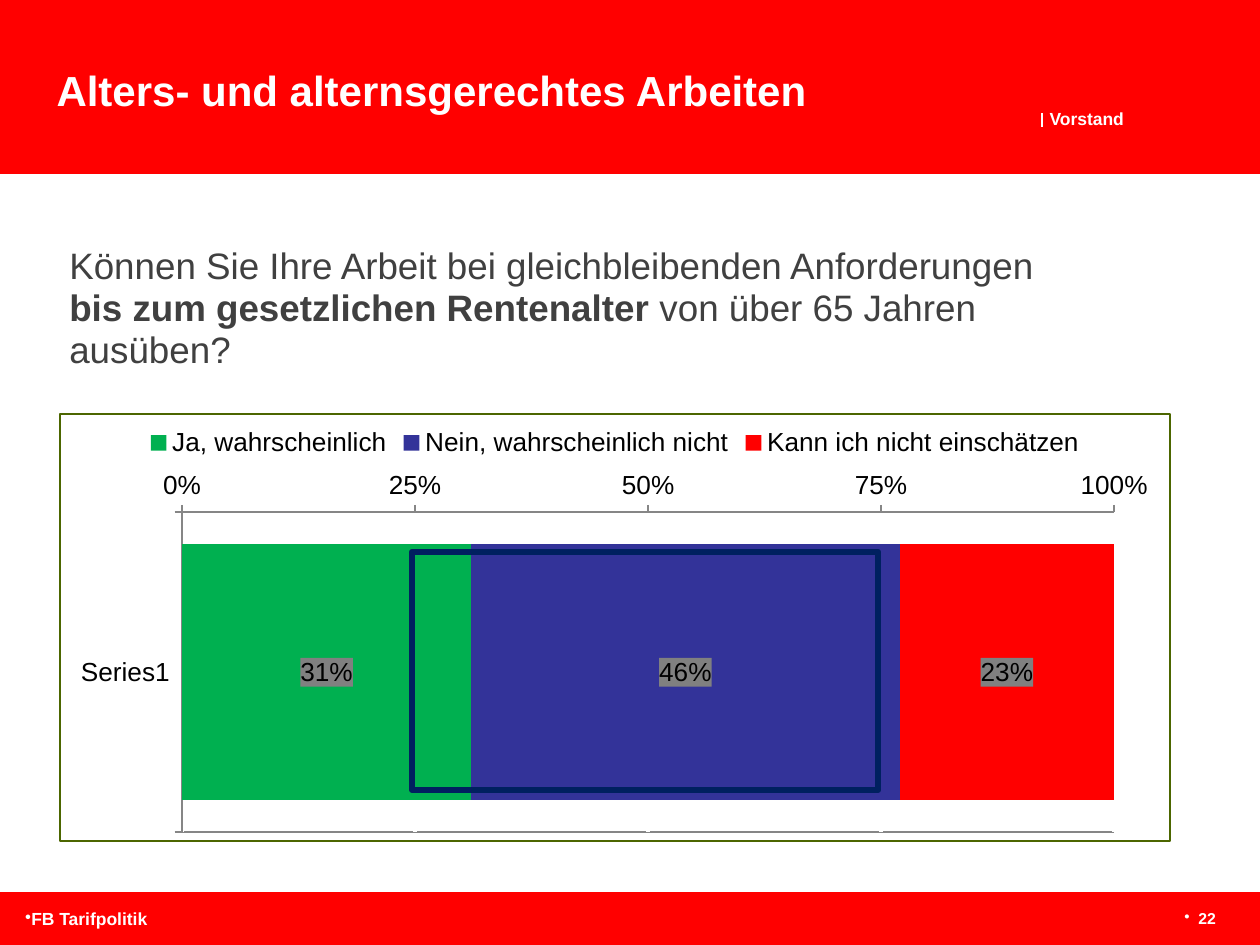
from lxml.etree import SubElement
from pptx import Presentation
from pptx.chart.data import CategoryChartData
from pptx.dml.color import RGBColor
from pptx.enum.chart import XL_CHART_TYPE, XL_LEGEND_POSITION, XL_TICK_LABEL_POSITION, XL_TICK_MARK
from pptx.enum.shapes import MSO_CONNECTOR, MSO_SHAPE
from pptx.enum.text import MSO_AUTO_SIZE, PP_ALIGN
from pptx.oxml import parse_xml
from pptx.oxml.ns import nsdecls, qn
from pptx.util import Inches, Pt

RED = RGBColor(0xFF, 0, 0)
WHITE = RGBColor(0xFF, 0xFF, 0xFF)
BLACK = RGBColor(0, 0, 0)
DARK = RGBColor(0x40, 0x40, 0x40)
GRAY = RGBColor(0x86, 0x86, 0x86)
NAVY = RGBColor(0, 0x20, 0x60)
GREEN = RGBColor(0, 0xB0, 0x50)
BLUE = RGBColor(0x33, 0x33, 0x99)
FONT = "Arial"
WIDE, HIGH = 10, 7.5

# Content
BANDS = [(0, 1.38), (7.08, 0.42)]  # top, height
TITLE = [("Alters- und alternsgerechtes Arbeiten", True)]
ASK = [
    ("Können Sie Ihre Arbeit bei gleichbleibenden Anforderungen \v", False),
    ("bis zum gesetzlichen Rentenalter", True),
    (" von über 65 Jahren ausüben?", False),
]
SERIES = [
    ("Ja, wahrscheinlich", 0.31, GREEN),
    ("Nein, wahrscheinlich nicht", 0.46, BLUE),
    ("Kann ich nicht einschätzen", 0.23, RED),
]
PLOT = {"x": 0.11, "y": 0.23, "w": 0.84, "h": 0.75}  # shares of the chart


def place(*box):
    return [Inches(v) for v in box]


def add_text(slide, box, runs, size, color=WHITE, lead=None, after=None,
             wrap=False, pad=0, align=None, hang=None):
    frame = slide.shapes.add_textbox(*place(*box)).text_frame
    frame.word_wrap = wrap
    frame.auto_size = MSO_AUTO_SIZE.SHAPE_TO_FIT_TEXT
    frame.margin_left = frame.margin_right = Inches(2 * pad)
    frame.margin_top = frame.margin_bottom = Inches(pad)
    para = frame.paragraphs[0]
    if hang is not None:
        props = para._p.get_or_add_pPr()
        props.set("marL", str(Inches(hang)))
        props.set("indent", str(-Inches(hang)))
        SubElement(props, qn("a:buChar")).set("char", "•")
    if lead:
        para.line_spacing = Pt(lead)
    if after:
        para.space_after = Pt(after)
    if align:
        para.alignment = align
    for words, bold in runs:
        for i, part in enumerate(words.split("\v")):
            if i:
                para.add_line_break()
            if part:
                run = para.add_run()
                run.text = part
                font = run.font
                font.name, font.size, font.bold = FONT, Pt(size), bold
                font.color.rgb = color


def add_box(slide, box, fill=None, line=None, width=0):
    shape = slide.shapes.add_shape(MSO_SHAPE.RECTANGLE, *place(*box))
    shape.shadow.inherit = False
    if fill is None:
        shape.fill.background()
    else:
        shape.fill.solid()
        shape.fill.fore_color.rgb = fill
    if line is None:
        shape.line.fill.background()
    else:
        shape.line.color.rgb = line
        shape.line.width = Pt(width)


def paint(fill, line=""):
    edge = ""
    if line:
        edge = f'<a:ln w="12700"><a:solidFill><a:srgbClr val="{line}"/></a:solidFill></a:ln>'
    return parse_xml(f'<c:spPr {nsdecls("c", "a")}><a:solidFill><a:srgbClr val="{fill}"/>'
                     f'</a:solidFill>{edge}</c:spPr>')


def add_bars(slide, box):
    data = CategoryChartData(number_format="0%")
    data.categories = ["Series1"]
    for name, value, _ in SERIES:
        data.add_series(name, [value])
    chart = slide.shapes.add_chart(
        XL_CHART_TYPE.BAR_STACKED_100, *place(*box), data).chart
    chart.has_title = False
    chart.font.name, chart.font.size = FONT, Pt(15)
    chart.font.color.rgb = BLACK
    chart.has_legend = True
    chart.legend.position = XL_LEGEND_POSITION.TOP
    chart.legend.include_in_layout = False

    # Axes
    cat, val = chart.category_axis, chart.value_axis
    cat.reverse_order = True
    cat.tick_label_position = XL_TICK_LABEL_POSITION.LOW
    val.minimum_scale, val.maximum_scale, val.major_unit = 0, 1, 0.25
    val.tick_labels.number_format = "0%"
    val.tick_labels.number_format_is_linked = False
    for axis, color, width in [(cat, GRAY, 1.5), (val, WHITE, 2)]:
        axis.major_tick_mark = XL_TICK_MARK.OUTSIDE
        axis.format.line.color.rgb = GRAY
        axis.format.line.width = Pt(1)
        axis.has_major_gridlines = True
        grid = axis.major_gridlines.format.line
        grid.color.rgb, grid.width = color, Pt(width)

    # Bars and labels
    plot = chart.plots[0]
    plot.gap_width, plot.overlap = 25, 100
    plot.vary_by_categories = False
    for bar, (_, _, color) in zip(plot.series, SERIES):
        bar.format.fill.solid()
        bar.format.fill.fore_color.rgb = color
        tags = bar.data_labels
        tags.show_value = True
        tags.number_format = "0%"
        tags.number_format_is_linked = False
        tags.font.size = Pt(15)
        tags.font.color.rgb = BLACK
        tags._element.find(qn("c:txPr")).addprevious(paint("808080"))

    # Frame and plot area
    root = chart._chartSpace
    root.find(qn("c:chart")).addnext(paint("FFFFFF", "4C6600"))
    area = root.find(".//" + qn("c:plotArea"))
    old = area.find(qn("c:layout"))
    if old is not None:
        area.remove(old)
    parts = '<c:layoutTarget val="inner"/><c:xMode val="edge"/><c:yMode val="edge"/>'
    parts += "".join(f'<c:{k} val="{v}"/>' for k, v in PLOT.items())
    area.insert(0, parse_xml(f'<c:layout {nsdecls("c")}><c:manualLayout>{parts}'
                             '</c:manualLayout></c:layout>'))


def main():
    deck = Presentation()
    deck.slide_width, deck.slide_height = Inches(WIDE), Inches(HIGH)
    slide = deck.slides.add_slide(deck.slide_layouts[6])

    # Bands and sender
    for top, tall in BANDS:
        add_box(slide, (0, top, WIDE, tall), RED)
    add_text(slide, (8.33, 0.87, 0.61, 0.15), [("Vorstand", True)], 10, lead=11)
    rule = slide.shapes.add_connector(
        MSO_CONNECTOR.STRAIGHT, *place(8.27, 0.9, 8.27, 1.01))
    rule.line.color.rgb, rule.line.width = WHITE, Pt(0.8)
    SubElement(rule._element.spPr, qn("a:effectLst"))

    # Question, chart and marked range
    add_text(slide, (0.55, 1.94, 8.42, 1.01), ASK, 21, DARK, 24, 6, wrap=True)
    add_bars(slide, (0.47, 3.28, 8.82, 3.4))
    add_box(slide, (3.27, 4.38, 3.7, 1.89), line=NAVY, width=3.5)

    # Title and footer
    add_text(slide, (0.35, 0.46, 6.21, 0.5), TITLE, 24, pad=0.05)
    add_text(slide, (9.39, 7.2, 0.26, 0.17), [("22", True)], 9, lead=12,
             align=PP_ALIGN.RIGHT, hang=0.11)
    add_text(slide, (0.2, 7.21, 1.2, 0.17), [("FB Tarifpolitik", True)], 10,
             lead=12, wrap=True, hang=0)
    deck.save("out.pptx")


if __name__ == "__main__":
    main()
